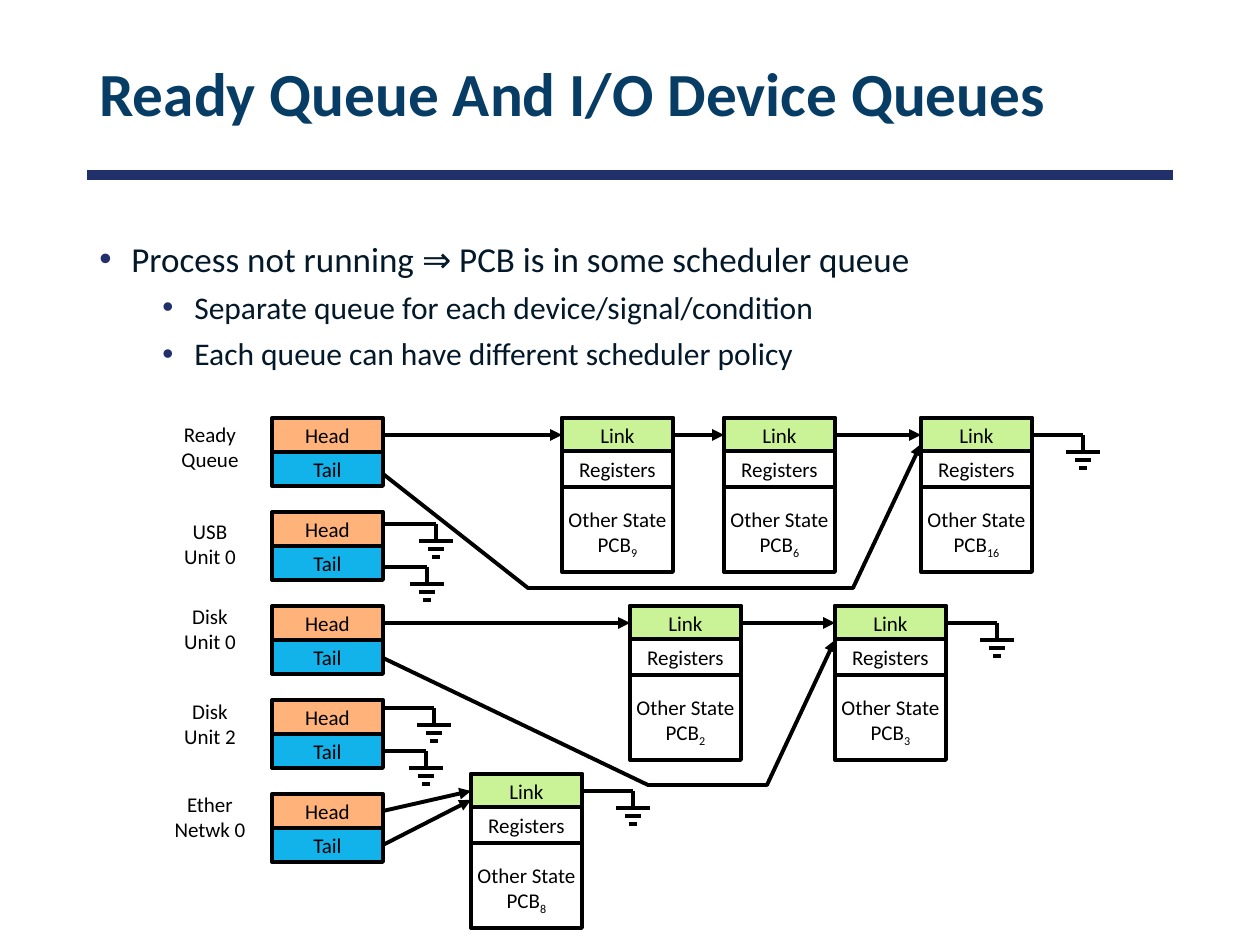
"""Build the slide on the ready queue and the I/O device queues."""
from lxml import etree
from pptx import Presentation
from pptx.dml.color import RGBColor
from pptx.enum.shapes import MSO_CONNECTOR, MSO_SHAPE
from pptx.enum.text import MSO_ANCHOR, PP_ALIGN
from pptx.oxml.ns import qn
from pptx.util import Pt

PX = 7257
STRAIGHT = MSO_CONNECTOR.STRAIGHT
RECTANGLE = MSO_SHAPE.RECTANGLE
TOP, MIDDLE = MSO_ANCHOR.TOP, MSO_ANCHOR.MIDDLE
LEFT, CENTER = PP_ALIGN.LEFT, PP_ALIGN.CENTER
LEFT_SIDE, RIGHT_SIDE = 1, 3

THEME = {
    "font": "Calibri",
    "title": "073C65", "body": "031828", "accent": "21306A",
    "ink": "000000", "paper": "FFFFFF",
    "link": "CAF297", "head": "FFB37A", "tail": "12B2EB",
    "title_size": 35, "body_size": 20, "sub_size": 18, "label_size": 12,
    "rule_width": 6, "stroke_width": 2.25,
}

deck = Presentation()
deck.slide_width, deck.slide_height = 1260 * PX, 945 * PX
page = deck.slides.add_slide(deck.slide_layouts[6])


def write(frame, lines, size, color="ink", align=CENTER, anchor=MIDDLE, bold=False, wrap=False):
    frame.word_wrap = wrap
    frame.vertical_anchor = anchor
    for index, line in enumerate(lines):
        para = frame.paragraphs[0] if index == 0 else frame.add_paragraph()
        para.alignment = align
        for text, baseline in line:
            span = para.add_run()
            span.text = text
            span.font.name = THEME["font"]
            span.font.size = Pt(THEME[size])
            span.font.bold = bold
            span.font.color.rgb = RGBColor.from_string(THEME[color])
            if baseline:
                span._r.get_or_add_rPr().set("baseline", str(baseline))


def draw_stroke(shape, color="ink", width="stroke_width", arrow=False):
    shape.line.color.rgb = RGBColor.from_string(THEME[color])
    shape.line.width = Pt(THEME[width])
    properties = shape.element.spPr
    if arrow:
        etree.SubElement(properties.find(qn("a:ln")), qn("a:tailEnd"), type="triangle")
    if properties.find(qn("a:effectLst")) is None:
        etree.SubElement(properties, qn("a:effectLst"))


rule = page.shapes.add_connector(STRAIGHT, 87 * PX, 175 * PX, 1173 * PX, 175 * PX)
draw_stroke(rule, "accent", "rule_width")

title = page.shapes.add_textbox(87 * PX, 29 * PX, 1086 * PX, 136 * PX)
write(title.text_frame, [[("Ready Queue And I/O Device Queues", 0)]],
      "title_size", "title", LEFT, bold=True, wrap=True)
title.text_frame.paragraphs[0].line_spacing = 0.9

bullets = [
    ("Process not running ⇒ PCB is in some scheduler queue", "body_size", 32, 10),
    ("Separate queue for each device/signal/condition", "sub_size", 95, 5),
    ("Each queue can have different scheduler policy", "sub_size", 95, 5),
]
body = page.shapes.add_textbox(87 * PX, 231 * PX, 1086 * PX, 684 * PX)
write(body.text_frame, [[(text, 0)] for text, *_ in bullets],
      "body_size", "body", LEFT, TOP, wrap=True)
for para, (text, size, margin, gap) in zip(body.text_frame.paragraphs, bullets):
    para.runs[0].font.size = Pt(THEME[size])
    para.space_before = Pt(gap)
    layout = para._p.get_or_add_pPr()
    layout.set("marL", str(margin * PX))
    layout.set("indent", str(-32 * PX))
    bullet_color = etree.SubElement(layout, qn("a:buClr"))
    etree.SubElement(bullet_color, qn("a:srgbClr"), val=THEME["accent"])
    etree.SubElement(layout, qn("a:buFont"), typeface="Arial")
    etree.SubElement(layout, qn("a:buChar"), char="•")

BOX_WIDTH, CELL_HEIGHT = 111, 34
cells = []
for number, left, top in [("9", 562, 418), ("6", 724, 418), ("16", 921, 418),
                          ("2", 630, 606), ("3", 835, 606), ("8", 471, 774)]:
    state = [[("Other State", 0)], [("PCB", 0), (number, -25000)]]
    cells += [
        (f"state {number}", left, top, 154, "paper", state, 83),
        (f"link {number}", left, top, CELL_HEIGHT, "link", [[("Link", 0)]], 6),
        (f"registers {number}", left, top + 33, 36, "paper", [[("Registers", 0)]], 6),
    ]

queues = [
    ("ready", ("Ready", "Queue"), 415, 84),
    ("usb 0", ("USB", "Unit 0"), 512, 78),
    ("disk 0", ("Disk", "Unit 0"), 597, 78),
    ("disk 2", ("Disk", "Unit 2"), 692, 78),
    ("ether", ("Ether", "Netwk 0"), 785, 100),
]
for row, (queue, words, label_top, label_width) in enumerate(queues):
    top = 418 + 94 * row
    cells += [
        (f"head {queue}", 272, top, CELL_HEIGHT, "head", [[("Head", 0)]], 6),
        (f"tail {queue}", 272, top + CELL_HEIGHT, CELL_HEIGHT, "tail", [[("Tail", 0)]], 6),
    ]
    label = page.shapes.add_textbox((210 - label_width // 2) * PX, label_top * PX,
                                    label_width * PX, 64 * PX)
    write(label.text_frame, [[(word, 0)] for word in words], "label_size", anchor=TOP)

boxes = {}
for name, left, top, height, fill, lines, inset in cells:
    box = page.shapes.add_shape(RECTANGLE, left * PX, top * PX, BOX_WIDTH * PX, height * PX)
    box.shadow.inherit = False
    box.fill.solid()
    box.fill.fore_color.rgb = RGBColor.from_string(THEME[fill])
    draw_stroke(box)
    box.text_frame.margin_top = inset * PX
    write(box.text_frame, lines, "label_size")
    boxes[name] = box

wires = [
    ("head ready", "link 9", True), ("link 9", "link 6", True), ("link 6", "link 16", True),
    ("head disk 0", "link 2", True), ("link 2", "link 3", True),
    ("head ether", "link 8", True), ("tail ether", (471, 800), True),
]
grounds = [
    ("link 16", 1083, 435), ("link 3", 997, 623), ("link 8", 633, 791),
    ((383, 524), 436, 524), ((383, 567), 427, 567),
    ((383, 708), 434, 708), ((383, 751), 426, 751),
]
for start, x, y in grounds:
    wires += [(start, (x, y), False), ((x, y), (x, y + 17), False)]
    for step, half in enumerate((17, 8, 4)):
        bar_y = y + 17 + 8 * step
        wires.append(((x - half, bar_y), (x + half, bar_y), False))

for start, end, arrow in wires:
    start_x, start_y = (0, 0) if start in boxes else start
    end_x, end_y = (0, 0) if end in boxes else end
    wire = page.shapes.add_connector(STRAIGHT, start_x * PX, start_y * PX, end_x * PX, end_y * PX)
    if start in boxes:
        wire.begin_connect(boxes[start], RIGHT_SIDE)
    if end in boxes:
        wire.end_connect(boxes[end], LEFT_SIDE)
    draw_stroke(wire, arrow=arrow)

for first, *others in [
    [(383, 474), (528, 588), (853, 588), (921, 444)],
    [(383, 658), (648, 785), (767, 785), (835, 640)],
]:
    builder = page.shapes.build_freeform(*first, scale=PX)
    builder.add_line_segments(others, close=False)
    tail_path = builder.convert_to_shape()
    tail_path.shadow.inherit = False
    tail_path.fill.background()
    draw_stroke(tail_path, arrow=True)

deck.save("out.pptx")
